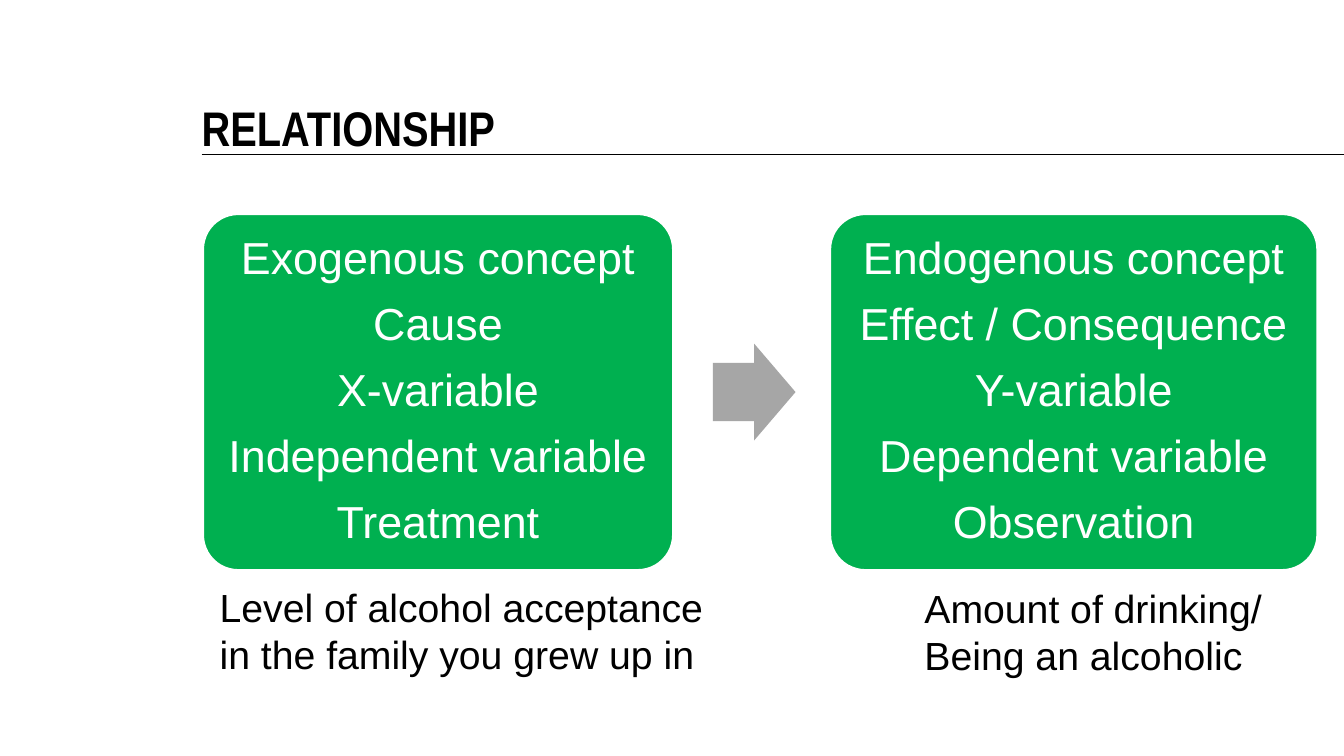
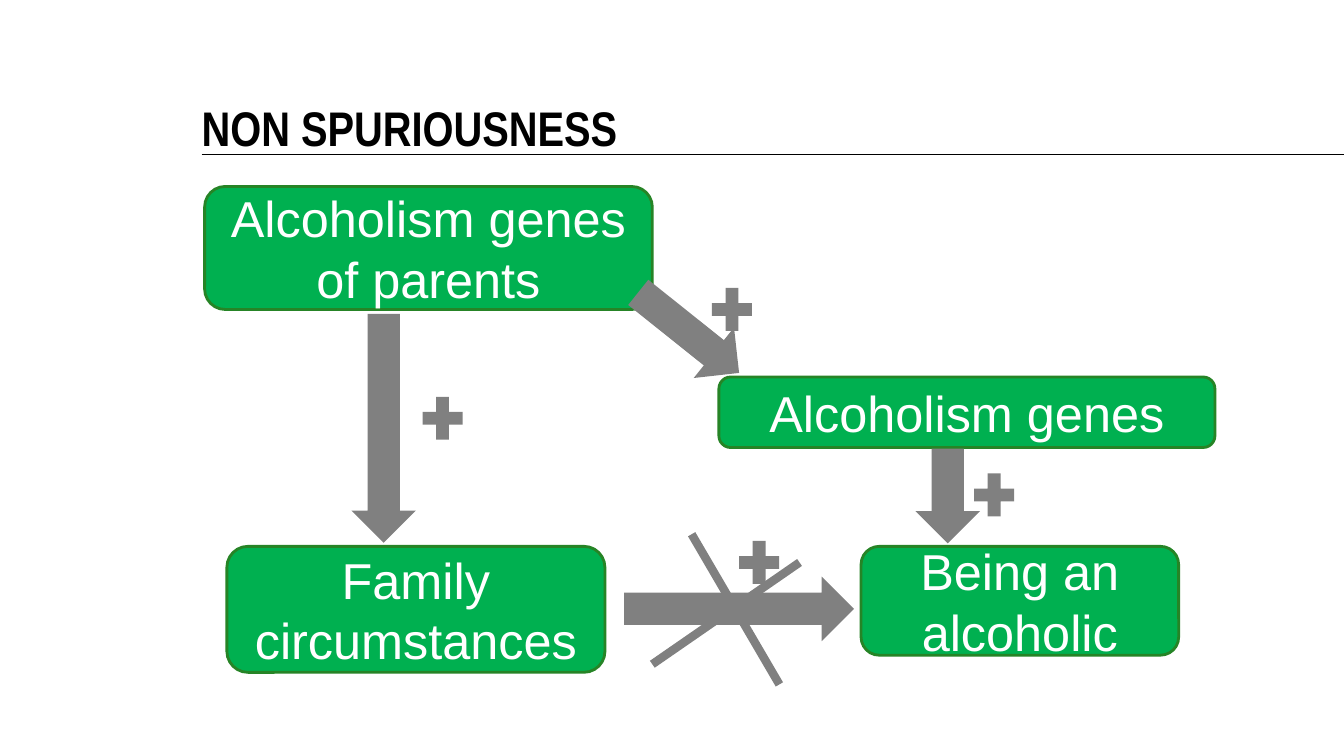
import pptx
import pptx.dml.color
import pptx.enum.shapes
import pptx.enum.text
import pptx.util
from lxml import etree
from pptx.oxml.ns import qn

Inches = pptx.util.Inches
Pt = pptx.util.Pt
Kind = pptx.enum.shapes.MSO_SHAPE
Align = pptx.enum.text.PP_ALIGN
Anchor = pptx.enum.text.MSO_ANCHOR

BLACK, WHITE = "000000", "FFFFFF"
GREEN, EDGE = "00B050", "268426"
PALE, GRAY = "A6A6A6", "808080"
FONT, HEAD = "Arial", "Arial Narrow"


def color(code):
    return pptx.dml.color.RGBColor.from_string(code)


class Deck:
    """Shared style and the current slide."""

    def __init__(self):
        self.file = pptx.Presentation()
        self.file.slide_width = Inches(13.33)
        self.file.slide_height = Inches(7.5)
        self.slide = None

    def page(self, title):
        self.slide = self.file.slides.add_slide(self.file.slide_layouts[5])
        self.line((2, 1.53), (13.33, 1.53), BLACK, 1)
        head = self.slide.shapes.title
        head.left, head.top = Inches(2), Inches(0.75)
        head.width, head.height = Inches(10.92), Inches(0.8)
        frame = head.text_frame
        frame.auto_size = pptx.enum.text.MSO_AUTO_SIZE.NONE
        self.inset(frame, 0)
        self.text(frame, [title], 34.7, BLACK, Align.LEFT, Anchor.BOTTOM,
                  font=HEAD, bold=True, space=Pt(33.3))

    def inset(self, frame, gap):
        frame.margin_left = frame.margin_right = Inches(gap)
        frame.margin_top = frame.margin_bottom = Inches(gap)

    def text(self, frame, lines, size, ink, align, anchor,
             font=FONT, bold=False, space=1.0, after=0):
        frame.word_wrap = True
        frame.vertical_anchor = anchor
        for n, line in enumerate(lines):
            para = frame.paragraphs[0] if n == 0 else frame.add_paragraph()
            para.alignment = align
            para.line_spacing = space
            para.space_before, para.space_after = Pt(0), Pt(after)
            run = para.add_run()
            run.text = line
            run.font.name, run.font.size = font, Pt(size)
            run.font.bold = bold
            run.font.color.rgb = color(ink)

    def shape(self, kind, spot, fill, edge=None, turn=0, adjust=()):
        item = self.slide.shapes.add_shape(kind, *map(Inches, spot))
        item.shadow.inherit = False
        item.fill.solid()
        item.fill.fore_color.rgb = color(fill)
        if edge:
            item.line.color.rgb = color(edge)
            item.line.width = Pt(2)
        else:
            item.line.fill.background()
        item.rotation = turn
        for n, value in enumerate(adjust):
            item.adjustments[n] = value
        return item

    def list(self, spot, lines):
        item = self.shape(Kind.ROUNDED_RECTANGLE, spot, GREEN, WHITE,
                          adjust=[0.1])
        self.inset(item.text_frame, 0.13)
        self.text(item.text_frame, lines, 32, WHITE, Align.CENTER,
                  Anchor.MIDDLE, space=0.9, after=12.6)

    def box(self, spot, text):
        item = self.shape(Kind.ROUNDED_RECTANGLE, spot, GREEN, EDGE)
        self.text(item.text_frame, [text], 36, WHITE, Align.CENTER,
                  Anchor.MIDDLE)

    def note(self, spot, lines):
        item = self.slide.shapes.add_textbox(*map(Inches, spot))
        self.text(item.text_frame, lines, 28, BLACK, Align.LEFT, Anchor.TOP)

    def arrow(self, spot, turn=0, fill=GRAY, adjust=()):
        self.shape(Kind.RIGHT_ARROW, spot, fill, turn=turn, adjust=adjust)

    def plus(self, left, top):
        self.shape(Kind.MATH_PLUS, (left, top, 0.54, 0.58), GRAY)

    def line(self, start, end, ink, width):
        item = self.slide.shapes.add_connector(
            pptx.enum.shapes.MSO_CONNECTOR.STRAIGHT,
            *map(Inches, start + end))
        item.line.color.rgb = color(ink)
        item.line.width = Pt(width)
        etree.SubElement(item._element.spPr, qn("a:effectLst"))


def main():
    deck = Deck()

    # Cause and effect
    deck.page("RELATIONSHIP")
    deck.list((2.01, 2.12, 4.67, 3.54),
              ["Exogenous concept", "Cause", "X-variable",
               "Independent variable", "Treatment"])
    deck.arrow((7.07, 3.41, 0.82, 0.96), fill=PALE, adjust=[0.6, 0.5])
    deck.list((8.23, 2.12, 4.84, 3.54),
              ["Endogenous concept", "Effect / Consequence", "Y-variable",
               "Dependent variable", "Observation"])
    deck.note((9.07, 5.75, 3.59, 1.04),
              ["Amount of drinking/", "Being an alcoholic"])
    deck.note((2.08, 5.74, 5.08, 1.04),
              ["Level of alcohol acceptance", "in the family you grew up in"])

    # Common cause
    deck.page("NON SPURIOUSNESS")
    for spot, text in [
        ((2.03, 1.85, 4.44, 1.22), "Alcoholism genes of parents"),
        ((2.25, 5.42, 3.75, 1.25), "Family circumstances"),
        ((8.54, 5.42, 3.15, 1.08), "Being an alcoholic"),
        ((7.13, 3.74, 4.92, 0.7), "Alcoholism genes"),
    ]:
        deck.box(spot, text)

    # Arrows: left, top, length and turn
    for left, top, length, turn in [
        (2.67, 3.93, 2.27, 90), (6.19, 5.72, 2.28, 0),
        (6.19, 2.98, 1.28, 38.6), (8.93, 4.6, 0.94, 90),
    ]:
        deck.arrow((left, top, length, 0.64), turn)
    for left, top in [(4.12, 3.86), (6.99, 2.78), (9.59, 4.62), (7.26, 5.29)]:
        deck.plus(left, top)

    # Cross over the spurious link
    deck.line((7.93, 5.58), (6.47, 6.59), GRAY, 6)
    deck.line((7.73, 6.79), (6.86, 5.3), GRAY, 6)

    deck.file.save("out.pptx")


if __name__ == "__main__":
    main()
